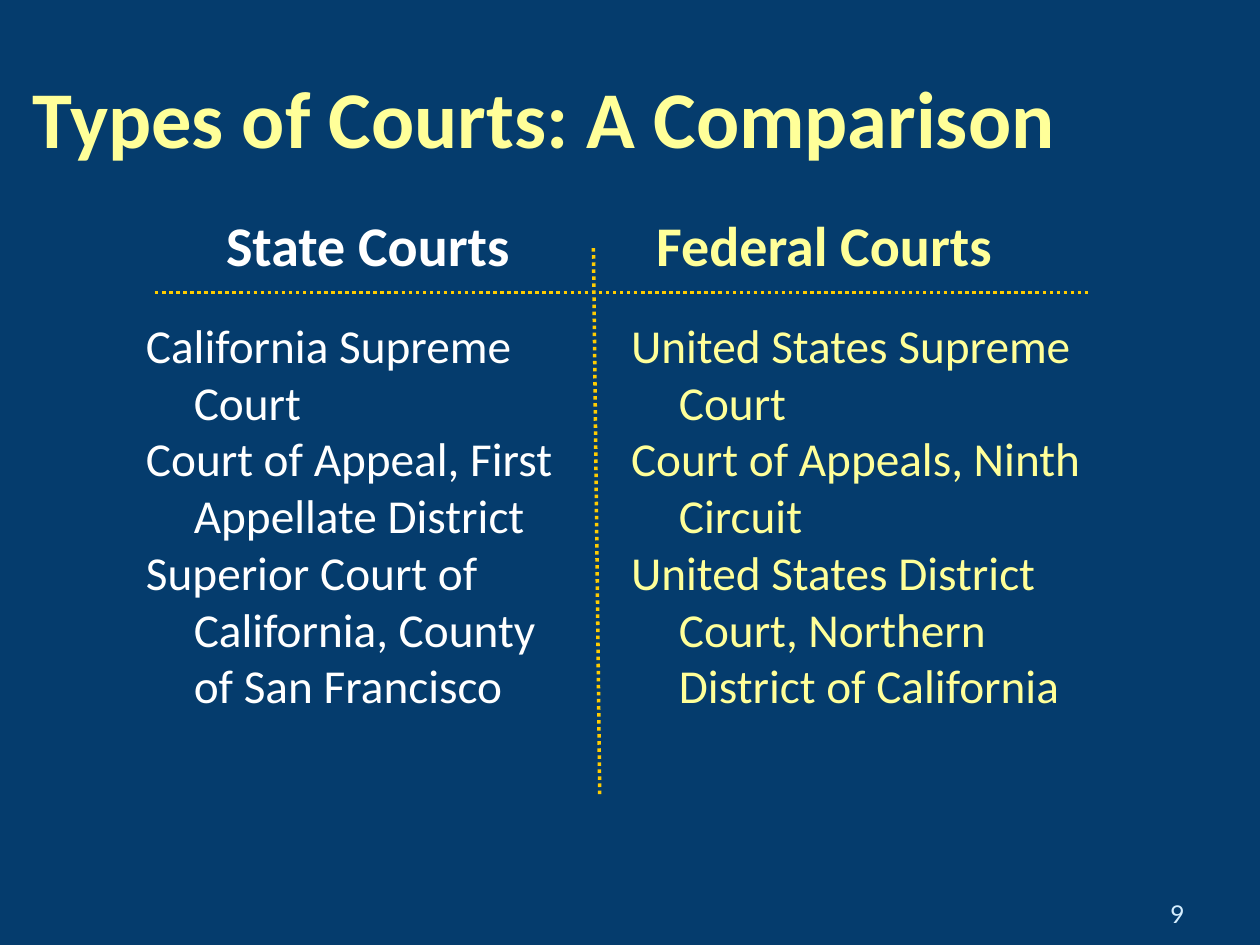
from pptx import Presentation
from pptx.dml.color import RGBColor
from pptx.enum.dml import MSO_LINE_DASH_STYLE as Dash
from pptx.enum.shapes import MSO_CONNECTOR as Conn
from pptx.enum.text import MSO_ANCHOR as Anchor, PP_ALIGN as Align
from pptx.oxml.ns import qn
from pptx.util import Inches, Pt
from lxml import etree

WIDE, HIGH = 10, 7.5
NAVY, WHITE, CREAM, GOLD, PALE = "053C6D", "FFFFFF", "FFFF99", "FFCC00", "D5EEFF"
HANG = Inches(0.38)

STATE = ["California Supreme Court",
         "Court of Appeal, First Appellate District",
         "Superior Court of California, County of San Francisco"]
FEDERAL = ["United States Supreme Court",
           "Court of Appeals, Ninth Circuit",
           "United States District Court, Northern District of California"]


def color(code):
    return RGBColor.from_string(code)


def put(item, values):
    for name, value in values.items():
        setattr(item, name, value)


def place(shape, box):
    put(shape, dict(zip(("left", "top", "width", "height"), map(Inches, box))))


def write(shape, lines, ink, size, face="Calibri", bold=False, para=None, **frame):
    """Fill a shape with one paragraph per line, all in one style."""
    text = shape.text_frame
    put(text, {"word_wrap": True, "margin_left": Inches(0.1), "margin_right": Inches(0.1),
               "margin_top": Inches(0.05), "margin_bottom": Inches(0.05), **frame})
    for i, line in enumerate(lines):
        p = text.add_paragraph() if i else text.paragraphs[0]
        put(p, {"alignment": Align.LEFT, **(para or {})})
        run = p.add_run()
        run.text = line
        put(run.font, {"name": face, "size": Pt(size), "bold": bold})
        run.font.color.rgb = color(ink)


def label(slide, box, *args, **more):
    shape = slide.shapes.add_textbox(*map(Inches, box))
    write(shape, *args, **more)
    return shape


def dots(slide, start, end):
    """Draw a dotted gold rule between two points."""
    rule = slide.shapes.add_connector(Conn.STRAIGHT, *map(Inches, start + end))
    put(rule.line, {"width": Pt(2), "dash_style": Dash.ROUND_DOT})
    rule.line.color.rgb = color(GOLD)
    etree.SubElement(rule._element.spPr, qn("a:effectLst"))


def title(slide, box, words):
    shape = slide.shapes.title
    place(shape, box)
    write(shape, [words], CREAM, 46, bold=True, vertical_anchor=Anchor.BOTTOM)


def column(slide, box, head, head_box, courts, ink, align):
    """Place a bold heading and its list of courts with hanging indents."""
    label(slide, head_box, [head], ink, 32, bold=True, para={"alignment": align})
    body = label(slide, box, courts, ink, 27)
    for p in body.text_frame.paragraphs:
        props = p._p.get_or_add_pPr()
        props.set("marL", str(HANG))
        props.set("indent", str(-HANG))


def compare(slide, box):
    """Place both court columns and the cross of rules between them."""
    x, y, w, h = box
    body, tall = y + 0.84, h - 0.84
    mid = x + 3.65
    column(slide, (x, body, mid - x, tall), "State Courts",
           (x + 0.45, y, 2.82, 0.64), STATE, WHITE, Align.CENTER)
    column(slide, (mid + 0.2, body, x + w - mid - 0.2, tall), "Federal Courts",
           (mid + 0.4, y, 2.89, 0.64), FEDERAL, CREAM, Align.LEFT)
    dots(slide, (x + 0.17, y + 0.7), (x + w - 0.28, y + 0.7))
    dots(slide, (mid, y + 0.35), (mid + 0.05, y + 4.7))


def main():
    deck = Presentation()
    put(deck, {"slide_width": Inches(WIDE), "slide_height": Inches(HIGH)})
    slide = deck.slides.add_slide(deck.slide_layouts[5])
    slide.background.fill.solid()
    slide.background.fill.fore_color.rgb = color(NAVY)
    title(slide, (0.16, 0.39, WIDE - 0.32, 0.97), "Types of Courts: A Comparison")
    compare(slide, (1.06, 1.62, 7.87, 4.99))
    label(slide, (7.42, 6.92, 2.08, 0.5), ["9"], PALE, 14, face="Lato",
          para={"alignment": Align.RIGHT}, vertical_anchor=Anchor.BOTTOM)
    deck.save("out.pptx")


if __name__ == "__main__":
    main()
